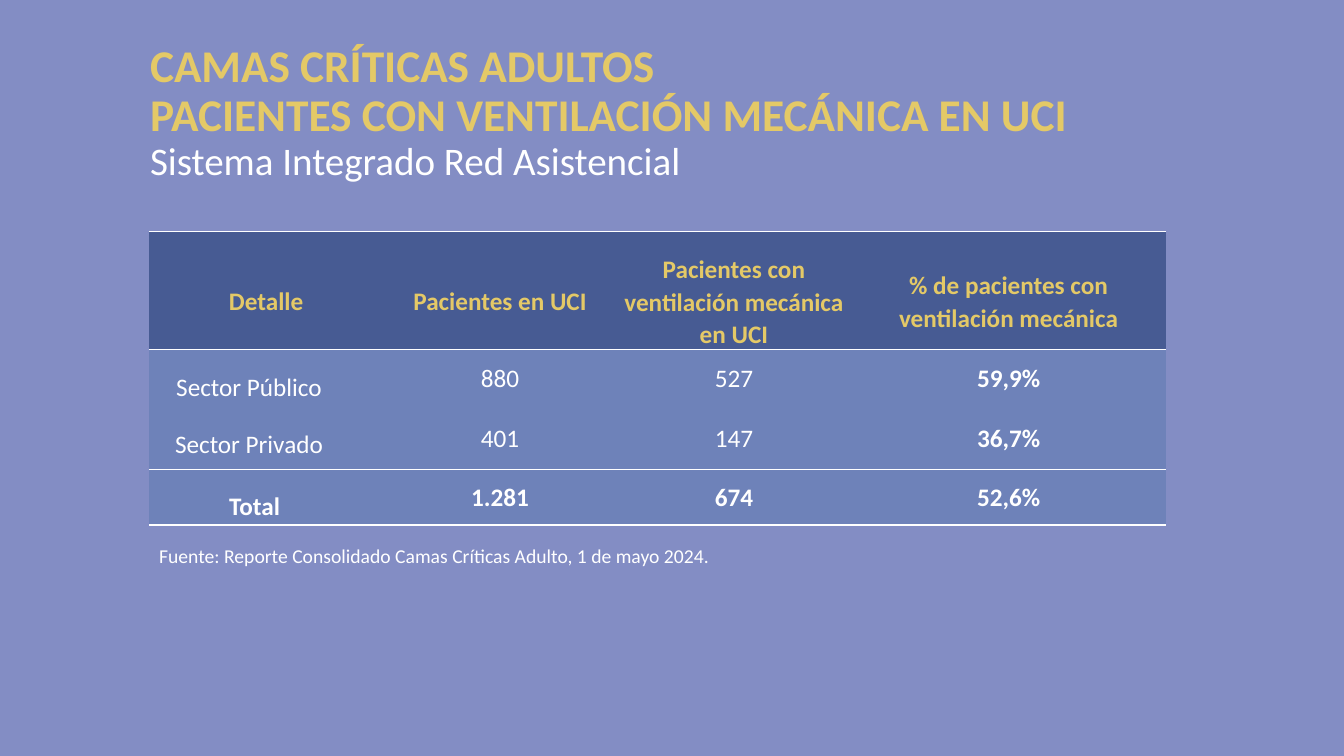
from lxml.etree import SubElement
from pptx import Presentation
from pptx.dml.color import RGBColor
from pptx.enum.text import MSO_ANCHOR, PP_ALIGN
from pptx.oxml.ns import qn
from pptx.util import Inches, Pt

COLORS = {"background": "838DC4", "gold": "E4C967", "white": "FFFFFF",
          "header": "475B93", "body": "6E82B9"}
FONT = "Calibri"
TITLE = [
    ("CAMAS CRÍTICAS ADULTOS", 32.4, "gold", True),
    ("PACIENTES CON VENTILACIÓN MECÁNICA EN UCI", 32.4, "gold", True),
    ("Sistema Integrado Red Asistencial", 27.9, "white", False),
]
SOURCE = [("Fuente: Reporte Consolidado Camas Críticas Adulto, 1 de mayo 2024.",
           14, "white", False)]
BEDS = [
    ("Detalle", "Pacientes en UCI", "Pacientes con ventilación mecánica en UCI",
     "% de pacientes con ventilación mecánica"),
    ("Sector Público", "880", "527", "59,9%"),
    ("Sector Privado", "401", "147", "36,7%"),
    ("Total", "1.281", "674", "52,6%"),
]
COLUMN_WIDTHS = [2.32, 2.32, 2.32, 3.13]
ROW_HEIGHTS = [1.17, 0.57, 0.62, 0.55]
RULED_EDGES = {(0, "lnT"), (0, "lnB"), (1, "lnT"), (2, "lnB"), (3, "lnT"), (3, "lnB")}
HEADER_INSETS = (0.02, 0.2, 0.02, 0)
SECTOR_INSETS = (0.02, 0.2, 0.36, 0)
TOTAL_INSETS = (0.02, 0.2, 0.25, 0)
FIGURE_INSETS = (0.01, 0.01, 0.01, 0)


def color(name):
    return RGBColor.from_string(COLORS[name])


def style(paragraph, size, tint, bold, spacing):
    paragraph.line_spacing = spacing
    font = paragraph.runs[0].font
    font.name, font.size, font.bold = FONT, Pt(size), bold
    font.color.rgb = color(tint)


def add_text(slide, lines, box, anchor, spacing):
    frame = slide.shapes.add_textbox(*map(Inches, box)).text_frame
    frame.word_wrap = True
    frame.vertical_anchor = anchor
    frame.text = "\n".join(line[0] for line in lines)
    for paragraph, (_, size, tint, bold) in zip(frame.paragraphs, lines):
        style(paragraph, size, tint, bold, spacing)


def set_borders(cell, row):
    properties = cell._tc.get_or_add_tcPr()
    for edge in ("lnL", "lnR", "lnT", "lnB"):
        border = SubElement(properties, qn(f"a:{edge}"), w=str(Pt(1)))
        if (row, edge) in RULED_EDGES:
            fill = SubElement(border, qn("a:solidFill"))
            SubElement(fill, qn("a:srgbClr"), val=COLORS["white"])
        else:
            SubElement(border, qn("a:noFill"))


def fill_cell(cell, text, row, column):
    header, label = row == 0, column == 0
    total = row == len(BEDS) - 1
    if header:
        insets = HEADER_INSETS
    elif label:
        insets = TOTAL_INSETS if total else SECTOR_INSETS
    else:
        insets = FIGURE_INSETS
    cell.margin_left, cell.margin_top, cell.margin_right, cell.margin_bottom = map(Inches, insets)
    cell.vertical_anchor = MSO_ANCHOR.TOP if label and not header else MSO_ANCHOR.MIDDLE
    set_borders(cell, row)
    cell.fill.solid()
    cell.fill.fore_color.rgb = color("header" if header else "body")
    cell.text_frame.text = text
    paragraph = cell.text_frame.paragraphs[0]
    paragraph.alignment = PP_ALIGN.CENTER
    bold = header or total or column == len(COLUMN_WIDTHS) - 1
    style(paragraph, 18, "gold" if header else "white", bold,
          1.07 if header or label else 1.0)


def add_beds_table(slide):
    box = (1.48, 2.3, sum(COLUMN_WIDTHS), sum(ROW_HEIGHTS))
    table = slide.shapes.add_table(len(BEDS), len(COLUMN_WIDTHS), *map(Inches, box)).table
    table.first_row = table.horz_banding = False
    for column, width in zip(table.columns, COLUMN_WIDTHS):
        column.width = Inches(width)
    for row, height in zip(table.rows, ROW_HEIGHTS):
        row.height = Inches(height)
    for row, texts in enumerate(BEDS):
        for column, text in enumerate(texts):
            fill_cell(table.cell(row, column), text, row, column)


def main():
    """Build the slide on ventilated adult patients in critical care."""
    deck = Presentation()
    deck.slide_width, deck.slide_height = Inches(13.33), Inches(7.5)
    slide = deck.slides.add_slide(deck.slide_layouts[6])
    slide.background.fill.solid()
    slide.background.fill.fore_color.rgb = color("background")
    add_text(slide, TITLE, (1.39, 0.4, 11.5, 1.45), MSO_ANCHOR.MIDDLE, 0.9)
    add_beds_table(slide)
    add_text(slide, SOURCE, (1.48, 5.35, 10.37, 0.34), MSO_ANCHOR.TOP, 1.0)
    deck.save("out.pptx")


if __name__ == "__main__":
    main()
